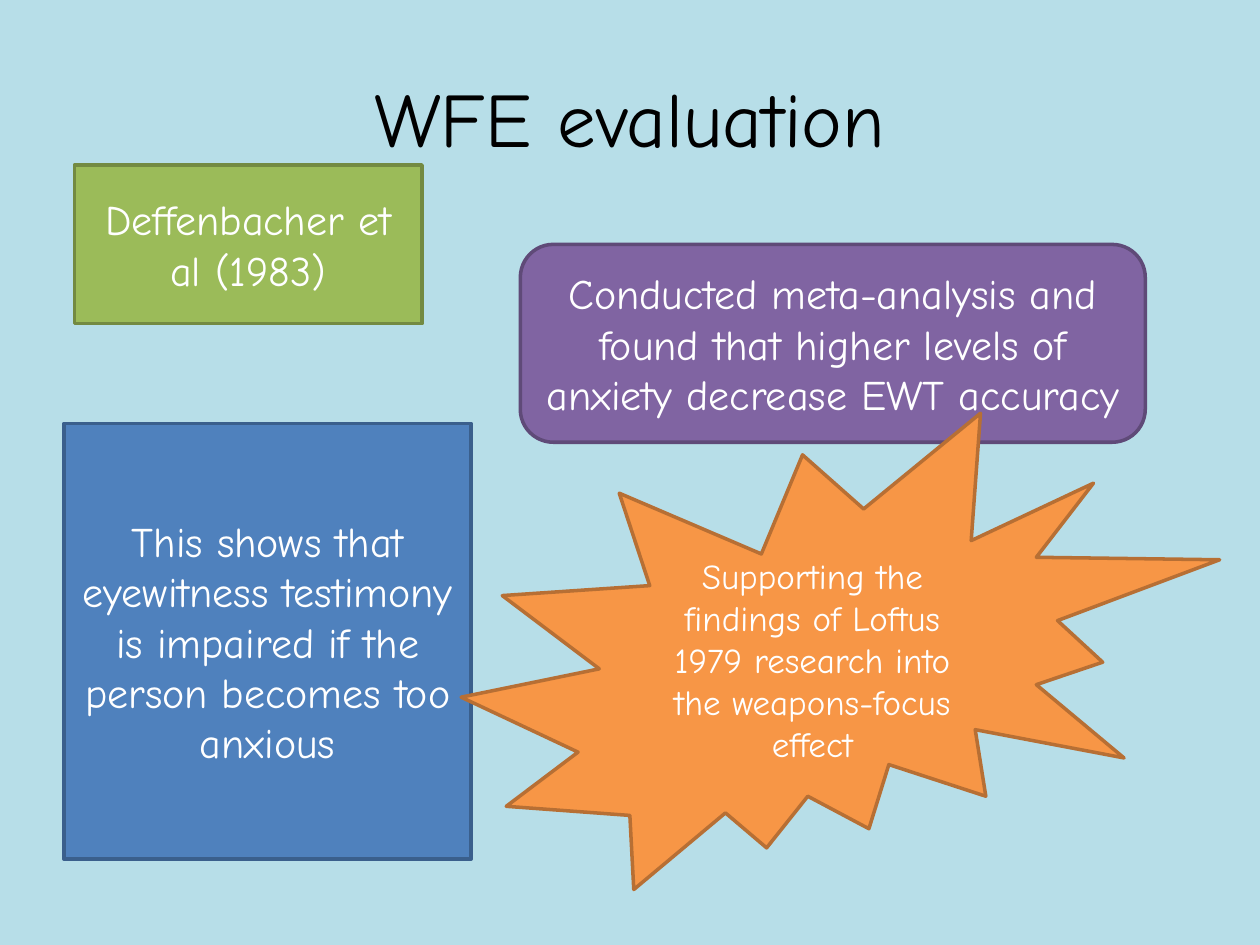
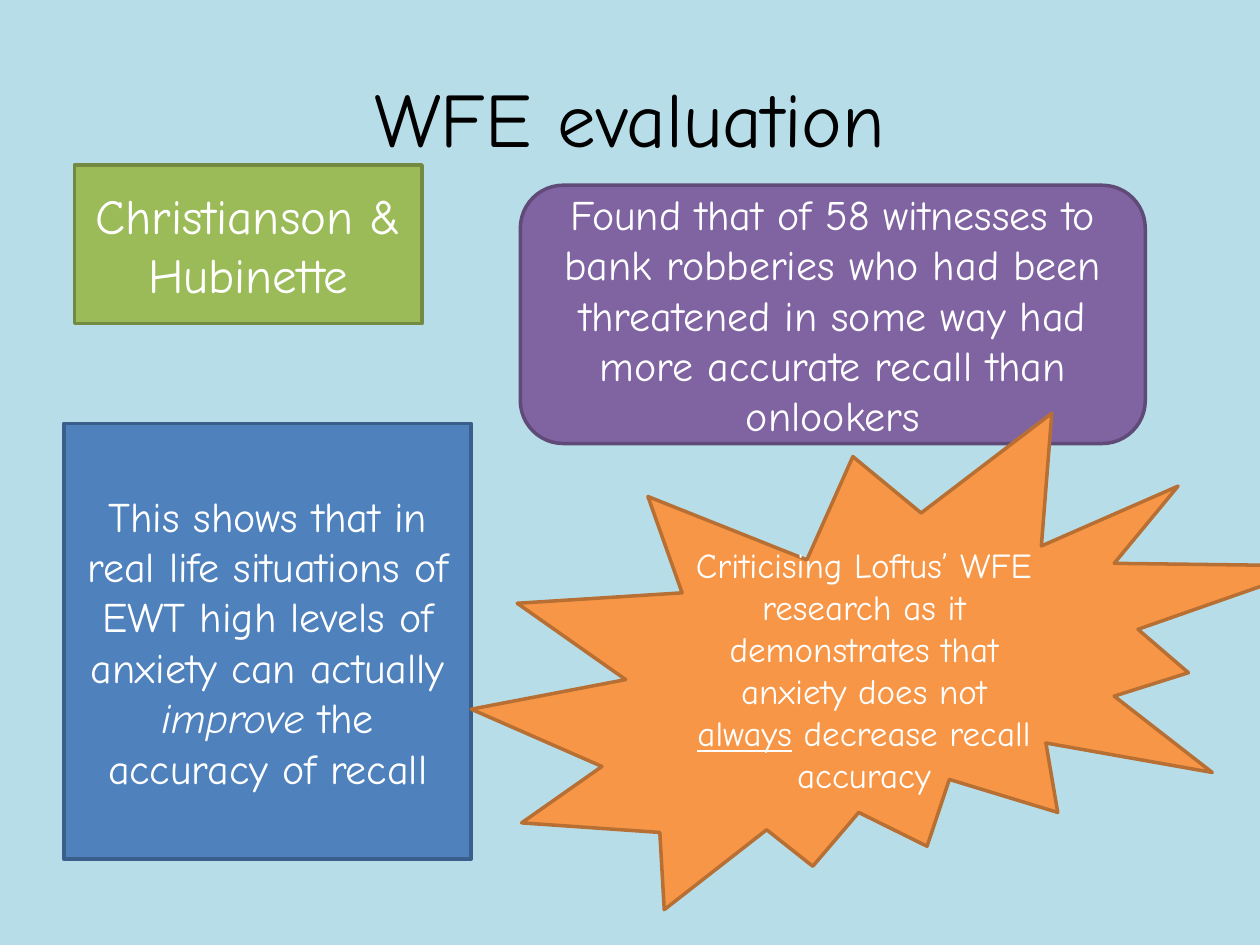
from pptx import Presentation
from pptx.dml.color import RGBColor
from pptx.enum import shapes, text
from pptx.util import Inches, Pt

FONT = "Comic Neue"
SKY = RGBColor(0xB7, 0xDE, 0xE8)
BLACK = RGBColor(0, 0, 0)
WHITE = RGBColor(0xFF, 0xFF, 0xFF)
GREEN = RGBColor(0x9B, 0xBB, 0x59), RGBColor(0x73, 0x8A, 0x42)
PURPLE = RGBColor(0x80, 0x64, 0xA2), RGBColor(0x5F, 0x4A, 0x78)
BLUE = RGBColor(0x4F, 0x81, 0xBD), RGBColor(0x3A, 0x5F, 0x8C)
ORANGE = RGBColor(0xF7, 0x96, 0x46), RGBColor(0xB7, 0x6F, 0x34)

KIND = shapes.MSO_SHAPE
STUDY = KIND.RECTANGLE, GREEN, (0.59, 1.31, 2.76, 1.26)
MEANING = KIND.RECTANGLE, BLUE, (0.51, 3.36, 3.23, 3.46)


def write(shape, parts, size, color):
    """Fill a shape with one centred paragraph, a run for each part."""
    frame = shape.text_frame
    frame.word_wrap = True
    frame.vertical_anchor = text.MSO_ANCHOR.MIDDLE
    para = frame.paragraphs[0]
    para.alignment = text.PP_ALIGN.CENTER
    for part in parts:
        run = para.add_run()
        run.text = part
        run.font.name = FONT
        run.font.size = Pt(size)
        run.font.color.rgb = color
    return para.runs


def place(slide, style, parts, size):
    """Add a filled, outlined shape with its text."""
    kind, (fill, line), box = style
    shape = slide.shapes.add_shape(kind, *map(Inches, box))
    shape.shadow.inherit = False
    shape.fill.solid()
    shape.fill.fore_color.rgb = fill
    shape.line.color.rgb = line
    shape.line.width = Pt(2)
    return write(shape, parts, size, WHITE)


prs = Presentation()
prs.slide_width, prs.slide_height = Inches(10), Inches(7.5)

pages = []
for _ in range(2):
    slide = prs.slides.add_slide(prs.slide_layouts[5])
    slide.background.fill.solid()
    slide.background.fill.fore_color.rgb = SKY
    title = slide.shapes.title
    title.left, title.top = Inches(0.5), Inches(0.3)
    title.width, title.height = Inches(9), Inches(1.25)
    write(title, ["WFE evaluation"], 44, BLACK)
    pages.append(slide)
support, against = pages

# Slide 1: evidence for the weapons-focus effect
finding = KIND.ROUNDED_RECTANGLE, PURPLE, (4.13, 1.94, 4.96, 1.57)
verdict = KIND.EXPLOSION2, ORANGE, (3.66, 3.28, 6.02, 3.78)
place(support, STUDY, ["Deffenbacher et al (1983)"], 24)
place(support, finding, ["Conducted meta-analysis and found that higher levels "
                         "of anxiety decrease EWT accuracy"], 24)
place(support, MEANING, ["This shows that eyewitness testimony is impaired "
                         "if the person becomes too anxious"], 24)
place(support, verdict, ["Supporting the findings of Loftus 1979 research "
                         "into the weapons-focus effect"], 20)

# Slide 2: evidence against it
finding = KIND.ROUNDED_RECTANGLE, PURPLE, (4.13, 1.47, 4.96, 2.05)
verdict = KIND.EXPLOSION2, ORANGE, (3.74, 3.28, 6.73, 3.94)
place(against, STUDY, ["Christianson & Hubinette"], 28)
place(against, finding, ["Found that of 58 witnesses to bank robberies who had "
                         "been threatened in some way had more accurate recall "
                         "than onlookers"], 24)
runs = place(against, MEANING, ["This shows that in real life situations of EWT "
                                "high levels of anxiety can actually ",
                                "improve", " the accuracy of recall"], 24)
runs[1].font.italic = True
runs = place(against, verdict, ["Criticising Loftus’ WFE research as it "
                                "demonstrates that anxiety does not ",
                                "always", " decrease recall accuracy"], 20)
runs[1].font.underline = True

prs.save("out.pptx")
